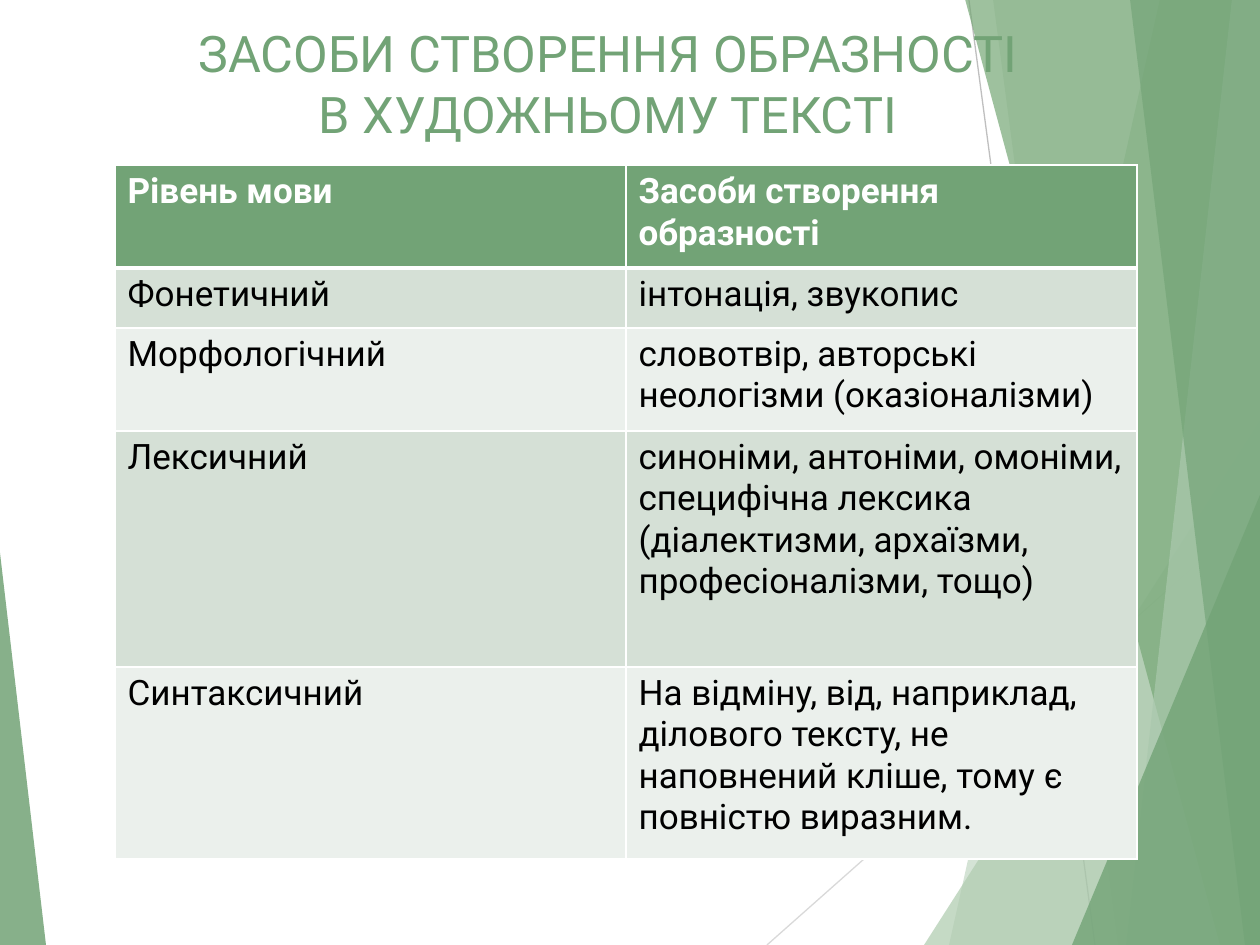
from lxml import etree
from pptx import Presentation, util as u
from pptx.dml.color import RGBColor
from pptx.enum import shapes, text
from pptx.oxml import ns

PX = 914400 / 126
GREEN, WHITE = "72A376", "FFFFFF"


def px(*lengths):
    return [u.Emu(round(length * PX)) for length in lengths]


def write(frame, words, size=20, color="000000", bold=False, align=text.PP_ALIGN.LEFT):
    paragraph = frame.paragraphs[0]
    paragraph.alignment = align
    run = paragraph.add_run()
    run.text = words
    run.font.name, run.font.size, run.font.bold = "Roboto", u.Pt(size), bold
    run.font.color.rgb = RGBColor.from_string(color)


prs = Presentation()
prs.slide_width, prs.slide_height = px(1260, 945)
slide = prs.slides.add_slide(prs.slide_layouts[5])
tree = slide.shapes

# Thin lines behind the facets
for ends, color in [((969, 0, 1095, 945), "BFBFBF"), ((1260, 508, 767, 945), "D9D9D9")]:
    ray = tree.add_connector(shapes.MSO_CONNECTOR.STRAIGHT, *px(*ends))
    ray.line.color.rgb = RGBColor.from_string(color)
    ray.line.width = u.Pt(0.75)
    etree.SubElement(ray._element.spPr, ns.qn("a:effectLst"))

# Facets: a panel is (top x, bottom x) and reaches the right edge;
# a triangle is (left, top, width, height, apex)
facets = [
    ((1160, 949), GREEN, 30),
    ((993, 1118), GREEN, 20),
    ((924, 420, 336, 525, 1), "B0CCB0", 72),
    ((965, 1220), "76A776", 70),
    ((1232, 1126), "AAC8AD", 70),
    ((1130, 1245), GREEN, 65),
    ((1072, 495, 188, 450, 1), GREEN, 80),
    ((0, 553, 46, 392, 0), GREEN, 85),
]
for geometry, color, opacity in facets:
    if len(geometry) == 2:
        top_x, bottom_x = geometry
        outline = tree.build_freeform(top_x, -1, scale=PX)
        outline.add_line_segments([(1260, -1), (1260, 945), (bottom_x, 945)])
        facet = outline.convert_to_shape()
    else:
        *box, apex = geometry
        facet = tree.add_shape(shapes.MSO_SHAPE.ISOSCELES_TRIANGLE, *px(*box))
        facet.adjustments[0] = apex
    facet.shadow.inherit = False
    facet.line.fill.background()
    facet.fill.solid()
    facet.fill.fore_color.rgb = RGBColor.from_string(color)
    tint = facet._element.spPr.find(".//" + ns.qn("a:srgbClr"))
    etree.SubElement(tint, ns.qn("a:alpha"), val=str(opacity * 1000))

# Title, brought in front of the facets
title = tree.title
title.left, title.top, title.width, title.height = px(164, 16, 888, 182)
frame = title.text_frame
frame.word_wrap = True
frame.auto_size = text.MSO_AUTO_SIZE.NONE
frame.vertical_anchor = text.MSO_ANCHOR.TOP
frame.margin_left, frame.margin_right = px(30, 30)
write(frame, "ЗАСОБИ СТВОРЕННЯ ОБРАЗНОСТІ В ХУДОЖНЬОМУ ТЕКСТІ",
      size=28.8, color=GREEN, align=text.PP_ALIGN.CENTER)
tree._spTree.append(title._element)

levels = [
    (103, "Рівень мови", "Засоби створення образності"),
    (60, "Фонетичний", "інтонація, звукопис"),
    (103, "Морфологічний", "словотвір, авторські неологізми (оказіоналізми)"),
    (236, "Лексичний", "синоніми, антоніми, омоніми, специфічна лексика "
                       "(діалектизми, архаїзми, професіоналізми, тощо)"),
    (192, "Синтаксичний", "На відміну, від, наприклад, ділового тексту, "
                          "не наповнений кліше, тому є повністю виразним."),
]
table_height = sum(level[0] for level in levels)
table = tree.add_table(len(levels), 2, *px(115, 165, 1022, table_height)).table
table.horz_banding = False
for r, (height, *row_texts) in enumerate(levels):
    table.rows[r].height = px(height)[0]
    header = r == 0
    fill = GREEN if header else ("EBF0EC", "D5E0D6")[r % 2]
    for c, words in enumerate(row_texts):
        cell = table.cell(r, c)
        write(cell.text_frame, words, color=WHITE if header else "000000", bold=header)
        cell_format = cell._tc.get_or_add_tcPr()
        for side in "LRTB":
            thick = (header and side == "B") or (r == 1 and side == "T")
            border = etree.SubElement(cell_format, ns.qn("a:ln" + side),
                                      w=str(u.Pt(3 if thick else 1)))
            stroke = etree.SubElement(border, ns.qn("a:solidFill"))
            etree.SubElement(stroke, ns.qn("a:srgbClr"), val=WHITE)
        cell.fill.solid()
        cell.fill.fore_color.rgb = RGBColor.from_string(fill)

prs.save("out.pptx")
